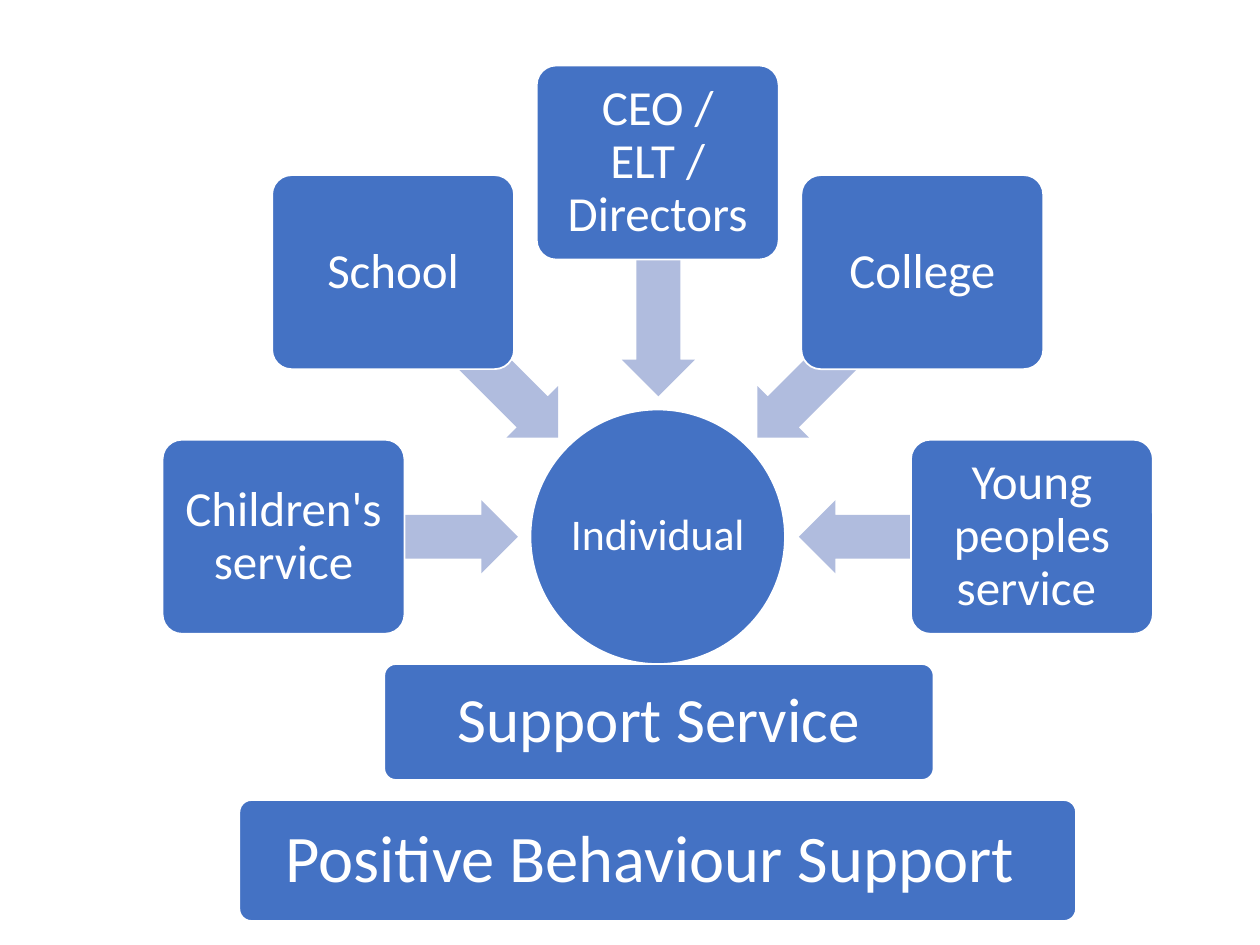
from math import cos, radians, sin

from pptx import Presentation
from pptx.dml.color import RGBColor
from pptx.enum.shapes import MSO_SHAPE as Kind
from pptx.enum.text import MSO_ANCHOR as Anchor, PP_ALIGN as Align
from pptx.util import Emu, Pt

SCALE = 9144  # EMU in one px, 100 px to the inch
BLUE = RGBColor(0x44, 0x72, 0xC4)
PALE = RGBColor(0xB0, 0xBC, 0xDE)
WHITE = RGBColor(0xFF, 0xFF, 0xFF)

HUB = (522, 426)
NODE_RAY = 297
ARROW_RAY = 204
NODES = [
    (180, "Children's service"),
    (225, "School"),
    (270, "CEO / ELT / Directors"),
    (315, "College"),
    (0, "Young peoples service "),
]


def px(n):
    return Emu(round(n) * SCALE)


def polar(ray, angle):
    """Centre of an item on a ring around the hub."""
    turn = radians(angle)
    return HUB[0] + ray * cos(turn), HUB[1] + ray * sin(turn)


class Canvas:
    font = "Calibri"

    def __init__(self, slide):
        self.slide = slide

    def shape(self, kind, mid, size, fill):
        x, y = mid
        w, h = size
        item = self.slide.shapes.add_shape(
            kind, px(x - w / 2), px(y - h / 2), px(w), px(h))
        item.shadow.inherit = False
        item.fill.solid()
        item.fill.fore_color.rgb = fill
        item.line.fill.background()
        return item

    def label(self, item, text, size, inset):
        item.line.color.rgb = WHITE
        item.line.width = Pt(1)
        frame = item.text_frame
        frame.text = text
        frame.word_wrap = True
        frame.vertical_anchor = Anchor.MIDDLE
        frame.margin_left = frame.margin_right = px(inset)
        frame.margin_top = frame.margin_bottom = px(inset)
        para = frame.paragraphs[0]
        para.alignment = Align.CENTER
        para.line_spacing = 0.9
        font = para.runs[0].font
        font.name = self.font
        font.size = Pt(size)
        font.color.rgb = WHITE

    def circle(self, mid, width, text, size):
        item = self.shape(Kind.OVAL, mid, (width, width), BLUE)
        self.label(item, text, size, 2)

    def box(self, mid, dims, text, size, inset):
        item = self.shape(Kind.ROUNDED_RECTANGLE, mid, dims, BLUE)
        item.adjustments[0] = 0.1
        self.label(item, text, size, inset)

    def arrow(self, mid, angle):
        item = self.shape(Kind.LEFT_ARROW, mid, (185, 58), PALE)
        item.adjustments[0] = 0.6
        item.adjustments[1] = 0.5
        item.rotation = angle


def main():
    deck = Presentation()
    deck.slide_width, deck.slide_height = px(1000), px(750)
    canvas = Canvas(deck.slides.add_slide(deck.slide_layouts[6]))

    # Hub with its ring of services
    canvas.circle(HUB, 202, "Individual", 25)
    for angle, text in NODES:
        canvas.arrow(polar(ARROW_RAY, angle), angle)
        canvas.box(polar(NODE_RAY, angle), (192, 154), text, 28, 6)

    # Supporting bars
    canvas.box((523, 573), (436, 92), "Support Service", 36, 15)
    canvas.box((522, 683), (664, 96), "Positive Behaviour Support ", 38, 16)

    deck.save("out.pptx")


if __name__ == "__main__":
    main()
